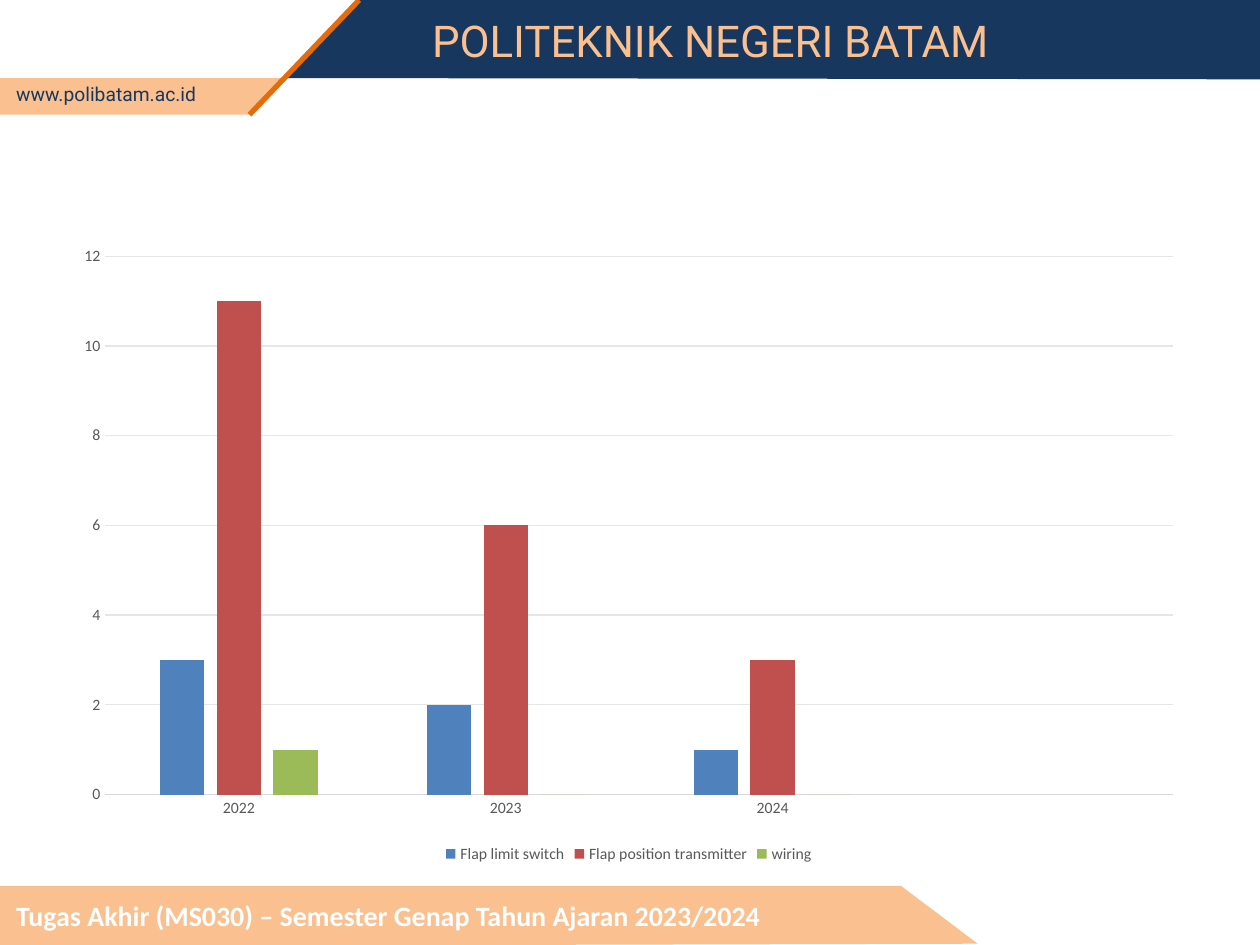
import pptx
import pptx.chart.data
import pptx.dml.color
import pptx.enum.chart
import pptx.enum.shapes
import pptx.enum.text
import pptx.oxml.ns
import pptx.util
from lxml import etree
from pptx.util import Inches

COLORS = {
    "peach": "FAC090",
    "navy": "17375E",
    "orange": "E46C0A",
    "white": "FFFFFF",
    "label": "595959",
    "axis": "D9D9D9",
    "grid": "E6E6E6",
    "limit_switch": "4F81BD",
    "transmitter": "C0504D",
    "wiring": "9BBB59",
}
YEARS = ["2022", "2023", "2024", ""]
FAULTS = [
    ("Flap limit switch", [3, 2, 1, None], "limit_switch"),
    ("Flap position transmitter", [11, 6, 3, None], "transmitter"),
    ("wiring", [1, 0, 0, None], "wiring"),
]


def rgb(name):
    return pptx.dml.color.RGBColor.from_string(COLORS[name])


def style_font(font, size, color, face="Calibri", bold=False):
    font.size = pptx.util.Pt(size)
    font.color.rgb = rgb(color)
    font.name = face
    font.bold = bold


def style_line(line, color, width):
    line.color.rgb = rgb(color)
    line.width = pptx.util.Pt(width)


def add_band(slide, corners, color):
    points = [(Inches(x), Inches(y)) for x, y in corners]
    builder = slide.shapes.build_freeform(*points[0])
    builder.add_line_segments(points[1:], close=True)
    band = builder.convert_to_shape()
    band.shadow.inherit = False
    band.fill.solid()
    band.fill.fore_color.rgb = rgb(color)
    band.line.fill.background()


def add_slash(slide, start, end):
    slash = slide.shapes.add_connector(
        pptx.enum.shapes.MSO_CONNECTOR.STRAIGHT,
        *(Inches(value) for value in start + end),
    )
    style_line(slash.line, "orange", 3)
    properties = slash.element.find(pptx.oxml.ns.qn("p:spPr"))
    etree.SubElement(properties, pptx.oxml.ns.qn("a:effectLst"))


def write_text(holder, text, **font_format):
    frame = holder.text_frame
    frame.word_wrap = True
    frame.auto_size = pptx.enum.text.MSO_AUTO_SIZE.NONE
    frame.vertical_anchor = pptx.enum.text.MSO_ANCHOR.TOP
    paragraph = frame.paragraphs[0]
    paragraph.alignment = pptx.enum.text.PP_ALIGN.LEFT
    run = paragraph.add_run()
    run.text = text
    style_font(run.font, **font_format)


def add_label(slide, box, text, **font_format):
    label = slide.shapes.add_textbox(*(Inches(value) for value in box))
    write_text(label, text, **font_format)


def add_title(slide, box, text, **font_format):
    title = slide.shapes.title
    title.left, title.top, title.width, title.height = map(Inches, box)
    write_text(title, text, **font_format)
    slide.shapes.element.append(title.element)


def style_axes(chart):
    for axis in (chart.category_axis, chart.value_axis):
        axis.major_tick_mark = pptx.enum.chart.XL_TICK_MARK.NONE
        axis.minor_tick_mark = pptx.enum.chart.XL_TICK_MARK.NONE
        style_font(axis.tick_labels.font, 9, "label")
    style_line(chart.category_axis.format.line, "axis", 0.75)
    values = chart.value_axis
    values.minimum_scale, values.maximum_scale, values.major_unit = 0, 12, 2
    values.format.line.fill.background()
    style_line(values.major_gridlines.format.line, "grid", 0.75)


def add_fault_chart(slide, box):
    data = pptx.chart.data.CategoryChartData()
    data.categories = YEARS
    for name, counts, _ in FAULTS:
        data.add_series(name, counts)
    chart = slide.shapes.add_chart(
        pptx.enum.chart.XL_CHART_TYPE.COLUMN_CLUSTERED,
        *(Inches(value) for value in box),
        data,
    ).chart
    style_font(chart.font, 10, "label")
    chart.has_title = False
    style_axes(chart)
    chart.has_legend = True
    chart.legend.position = pptx.enum.chart.XL_LEGEND_POSITION.BOTTOM
    chart.legend.include_in_layout = False
    style_font(chart.legend.font, 9, "label")
    plot = chart.plots[0]
    plot.vary_by_categories = False
    plot.gap_width = 246
    plot.overlap = -28
    for series, (_, _, color) in zip(plot.series, FAULTS):
        series.invert_if_negative = False
        series.format.fill.solid()
        series.format.fill.fore_color.rgb = rgb(color)


def main():
    deck = pptx.Presentation()
    deck.slide_width, deck.slide_height = Inches(10), Inches(7.5)
    slide = deck.slides.add_slide(deck.slide_layouts.get_by_name("Title Only"))

    add_band(slide, [(0, 0.91), (1.98, 0.91), (2.25, 0.62), (0, 0.62)], "peach")
    add_band(slide, [(10, 0), (2.85, 0), (2.24, 0.62), (10, 0.63)], "navy")
    add_slash(slide, (1.98, 0.91), (2.85, 0))
    add_label(slide, (0.03, 0.6, 2.41, 0.29), "www.polibatam.ac.id",
              size=11, color="navy", face="Roboto")
    add_title(slide, (3.33, 0.06, 5.79, 0.52), "POLITEKNIK NEGERI BATAM",
              size=25, color="peach", face="Roboto")
    add_band(slide, [(0, 7.03), (7.15, 7.03), (7.76, 7.49), (0, 7.51)], "peach")
    add_label(slide, (0.03, 7.08, 7.3, 0.37),
              "Tugas Akhir (MS030) – Semester Genap Tahun Ajaran 2023/2024",
              size=16, color="white", bold=True)
    add_fault_chart(slide, (0.49, 1.86, 9, 5.03))

    deck.save("out.pptx")


if __name__ == "__main__":
    main()
